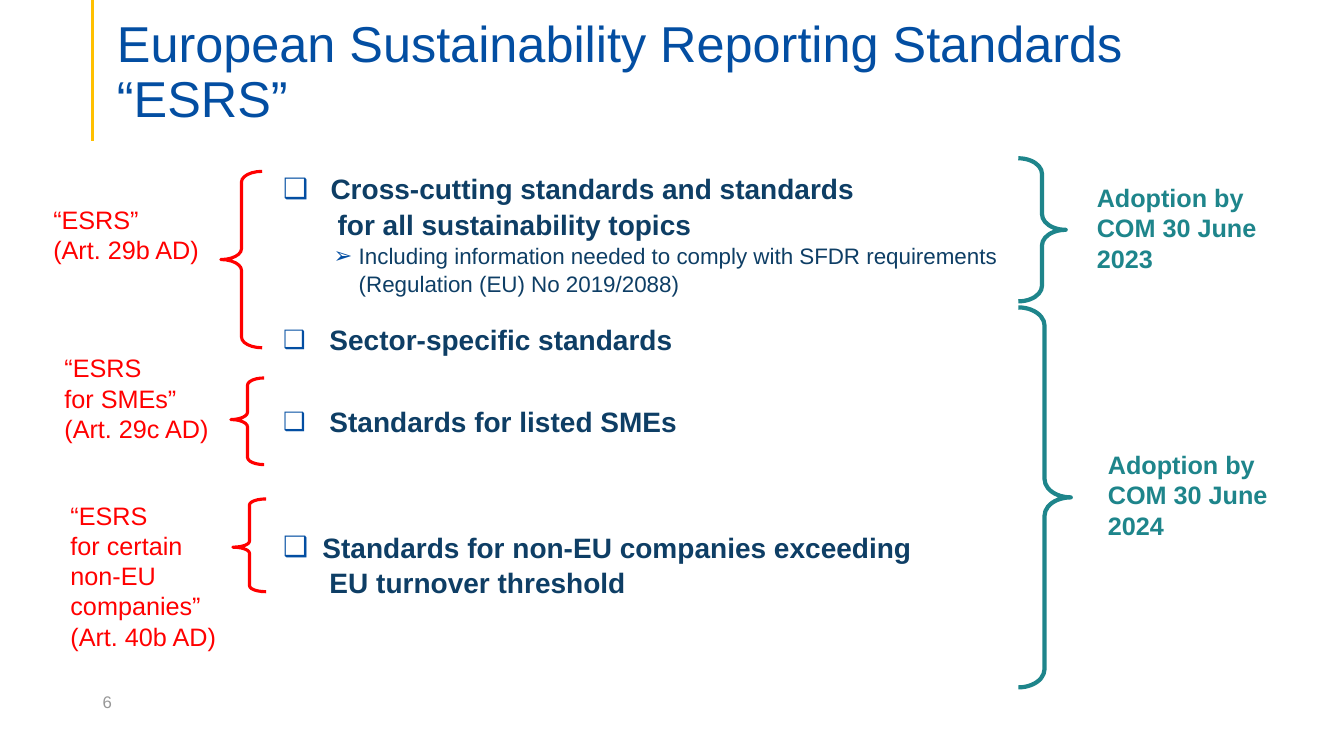
import pptx
import pptx.util
import pptx.dml.color
import pptx.enum.shapes
import pptx.enum.text
import pptx.oxml.ns
from lxml import etree

Inches = pptx.util.Inches
Pt = pptx.util.Pt
Shape = pptx.enum.shapes.MSO_SHAPE
Anchor = pptx.enum.text.MSO_ANCHOR
qn = pptx.oxml.ns.qn

BLUE, NAVY, TEAL, RED = "034EA2", "0E3E65", "1E858B", "FF0000"
GOLD, GREY = "FFC000", "979797"

STANDARDS = [
    # text, size, bold, left edge, bullet, bullet percent, bullet edge, space before
    ("Cross-cutting standards and standards", 20, True, 0.47, "❑", 100, 0, 0),
    ("for all sustainability topics", 20, True, 0.54, None, 100, 0.54, 0),
    ("Including information needed to comply with SFDR requirements",
     16, False, 0.75, "➢", 100, 0.5, 0),
    ("(Regulation (EU) No 2019/2088)", 16, False, 0.75, None, 100, 0.75, 0),
    ("Sector-specific standards", 20, True, 0.46, "❑", 90, 0, 17),
    ("Standards for listed SMEs", 20, True, 0.46, "❑", 90, 0, 33.5),
    ("Standards for non-EU companies exceeding", 20, True, 0.39, "❑", 100, 0, 64.5),
    ("EU turnover threshold", 20, True, 0.46, None, 100, 0.46, 0),
]

LEGAL_BASES = [
    ((0.43, 1.98, 1.65, 0.74), ["“ESRS”", "(Art. 29b AD)"],
     (2.19, 1.7, 0.41, 1.75), (0.26, 0.5)),
    ((0.54, 3.45, 1.65, 1.01), ["“ESRS", "for SMEs”", "(Art. 29c AD)"],
     (2.29, 3.75, 0.33, 0.86), (0.22, 0.48)),
    ((0.6, 4.91, 1.71, 1.62),
     ["“ESRS", "for certain", "non-EU companies”", "(Art. 40b AD)"],
     (2.31, 4.95, 0.33, 0.92), (0.18, 0.52)),
]

ADOPTIONS = [
    ((10.78, 1.76, 2.38, 1.01), ["Adoption by", "COM 30 June 2023"],
     (10.1, 1.57, 0.47, 1.42), (0.33, 0.5)),
    ((10.89, 4.41, 2.16, 1.01), ["Adoption by COM 30 June 2024"],
     (10.1, 3.05, 0.52, 3.77), (0.35, 0.5)),
]


def rgb(value):
    """Turn a hex string into a colour."""
    return pptx.dml.color.RGBColor.from_string(value)


def inches(box):
    """Turn numbers into lengths in inches."""
    return [Inches(length) for length in box]


def apply(target, formats):
    """Set each attribute named in formats."""
    for name, value in formats.items():
        setattr(target, name, value)


def write(paragraph, text, size, color, bold=False):
    """Add a formatted run to a paragraph."""
    run = paragraph.add_run()
    run.text = text
    apply(run.font, {"name": "Arial", "size": Pt(size), "bold": bold})
    run.font.color.rgb = rgb(color)


def add_frame(slide, box, anchor=Anchor.TOP):
    """Add a wrapping text box and return its text frame."""
    frame = slide.shapes.add_textbox(*inches(box)).text_frame
    apply(frame, {"word_wrap": True, "vertical_anchor": anchor})
    return frame


def paragraphs(frame, count):
    """Yield the first paragraph of a frame, then new ones up to count."""
    yield frame.paragraphs[0]
    for _ in range(count - 1):
        yield frame.add_paragraph()


def add_bullet(paragraph, left, bullet, percent, edge):
    """Indent a paragraph and give it a coloured bullet if it has one."""
    properties = paragraph._p.get_or_add_pPr()
    properties.set("marL", str(Inches(left)))
    properties.set("indent", str(Inches(edge) - Inches(left)))
    if bullet:
        color = etree.SubElement(properties, qn("a:buClr"))
        etree.SubElement(color, qn("a:srgbClr"), val=BLUE)
        etree.SubElement(properties, qn("a:buSzPct"), val=str(percent * 1000))
        etree.SubElement(properties, qn("a:buFont"), typeface="Arial")
        etree.SubElement(properties, qn("a:buChar"), char=bullet)


def add_heading(slide, box):
    """Place the title and the gold rule at its left."""
    title = slide.shapes.title
    apply(title, dict(zip(("left", "top", "width", "height"), inches(box))))
    frame = title.text_frame
    apply(frame, {"word_wrap": True, "vertical_anchor": Anchor.BOTTOM,
                  "auto_size": pptx.enum.text.MSO_AUTO_SIZE.NONE,
                  "margin_bottom": 0})
    heading = frame.paragraphs[0]
    apply(heading, {"alignment": pptx.enum.text.PP_ALIGN.LEFT, "line_spacing": 0.9})
    write(heading, "European Sustainability Reporting Standards ", 36, BLUE)
    heading.add_line_break()
    write(heading, "“ESRS”", 36, BLUE)
    rule_x = Inches(box[0] - 0.14)
    rule = slide.shapes.add_connector(
        pptx.enum.shapes.MSO_CONNECTOR.STRAIGHT, rule_x, 0, rule_x, Inches(1.4))
    rule.line.color.rgb = rgb(GOLD)
    rule.line.width = Pt(2.25)
    etree.SubElement(rule._element.spPr, qn("a:effectLst"))


def add_standards(slide, box):
    """Place the bulleted list of standards."""
    frame = add_frame(slide, box)
    for paragraph, standard in zip(paragraphs(frame, len(STANDARDS)), STANDARDS):
        text, size, bold, left, bullet, percent, edge, gap = standard
        add_bullet(paragraph, left, bullet, percent, edge)
        paragraph.line_spacing = 1.05
        if gap:
            paragraph.space_before = Pt(gap)
        write(paragraph, text, size, NAVY, bold)


def add_braced_label(slide, group, kind, color, weight, bold):
    """Place a label and the brace that ties it to the list."""
    label_box, lines, brace_box, bends = group
    brace = slide.shapes.add_shape(kind, *inches(brace_box))
    brace.shadow.inherit = False
    brace.fill.background()
    brace.line.color.rgb = rgb(color)
    brace.line.width = Pt(weight)
    for index, bend in enumerate(bends):
        brace.adjustments[index] = bend
    frame = add_frame(slide, label_box)
    for paragraph, line in zip(paragraphs(frame, len(lines)), lines):
        write(paragraph, line, 18, color, bold)


def add_page_number(slide, box):
    """Place the page number."""
    write(add_frame(slide, box, Anchor.MIDDLE).paragraphs[0], "6", 12, GREY)


def main():
    """Build the slide and save it."""
    deck = pptx.Presentation()
    apply(deck, {"slide_width": Inches(13.33), "slide_height": Inches(7.5)})
    slide = deck.slides.add_slide(deck.slide_layouts[5])
    add_heading(slide, (1.06, 0.41, 12.12, 0.86))
    add_standards(slide, (2.71, 1.64, 7.6, 4.4))
    for legal_basis in LEGAL_BASES:
        add_braced_label(slide, legal_basis, Shape.LEFT_BRACE, RED, 2.25, False)
    for adoption in ADOPTIONS:
        add_braced_label(slide, adoption, Shape.RIGHT_BRACE, TEAL, 3, True)
    add_page_number(slide, (0.92, 6.83, 0.32, 0.27))
    deck.save("out.pptx")


if __name__ == "__main__":
    main()
